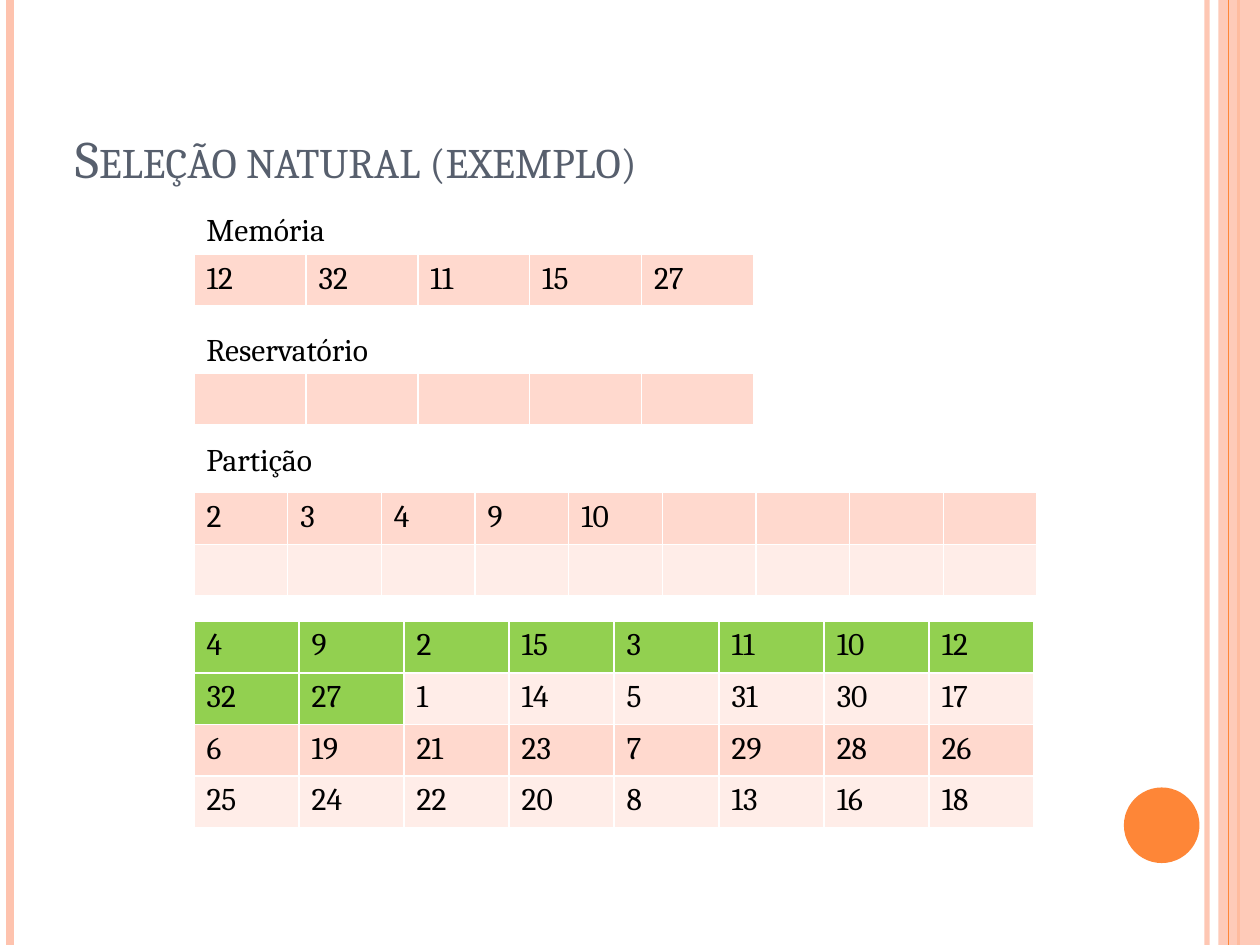
from lxml import etree
from pptx import Presentation
from pptx.dml.color import RGBColor
from pptx.enum.shapes import MSO_CONNECTOR, MSO_SHAPE
from pptx.enum.text import MSO_ANCHOR, MSO_AUTO_SIZE
from pptx.oxml.ns import qn
from pptx.util import Inches, Pt

STRAIGHT = MSO_CONNECTOR.STRAIGHT
RECTANGLE, OVAL = MSO_SHAPE.RECTANGLE, MSO_SHAPE.OVAL
BOTTOM = MSO_ANCHOR.BOTTOM
FIT_SHAPE = MSO_AUTO_SIZE.SHAPE_TO_FIT_TEXT

ORANGE = RGBColor(0xFE, 0x86, 0x37)
PEACH = RGBColor(0xFE, 0xC3, 0xAE)
SLATE = RGBColor(0x57, 0x5F, 0x6D)
BLACK = RGBColor(0, 0, 0)
GREEN = RGBColor(0x92, 0xD0, 0x50)
BANDS = [RGBColor(0xFF, 0xD9, 0xCE), RGBColor(0xFF, 0xED, 0xE8)]
FONT = "Cambria"
LEFT = 1.54
ROW_HEIGHT = 0.41

MEMORY = [[12, 32, 11, 15, 27]]
RESERVOIR = [[""] * 5]
PARTITION = [[2, 3, 4, 9, 10] + [""] * 4, [""] * 9]
INPUT = [
    [4, 9, 2, 15, 3, 11, 10, 12],
    [32, 27, 1, 14, 5, 31, 30, 17],
    [6, 19, 21, 23, 7, 29, 28, 26],
    [25, 24, 22, 20, 8, 13, 16, 18],
]
ALREADY_READ = 10


def set_alpha(part, percent):
    color = next(part._element.spPr.iter(qn("a:srgbClr")))
    etree.SubElement(color, qn("a:alpha")).set("val", str(percent * 1000))


def style_run(run, size, color):
    run.font.name = FONT
    run.font.size = Pt(size)
    run.font.color.rgb = color


def add_stripe(slide, x, height, color, width):
    stripe = slide.shapes.add_connector(
        STRAIGHT, Inches(x), 0, Inches(x), Inches(height))
    stripe.line.color.rgb = color
    stripe.line.width = Pt(width)
    etree.SubElement(stripe._element.spPr, qn("a:effectLst"))
    return stripe


def add_plain_shape(slide, kind, left, top, width, height, color):
    shape = slide.shapes.add_shape(
        kind, Inches(left), Inches(top), Inches(width), Inches(height))
    shape.shadow.inherit = False
    shape.fill.solid()
    shape.fill.fore_color.rgb = color
    shape.line.fill.background()
    return shape


def add_decoration(slide, width, height):
    # Stripes along both edges, and the disc
    set_alpha(add_stripe(slide, width - 0.42, height, PEACH, 3), 93)
    add_stripe(slide, 0.08, height, PEACH, 4.5)
    add_stripe(slide, width - 0.17, height, ORANGE, 1.5)
    band = add_plain_shape(slide, RECTANGLE, width - 0.33, 0, 0.33, height, PEACH)
    set_alpha(band, 87)
    add_stripe(slide, width - 0.25, height, ORANGE, 0.75)
    add_plain_shape(slide, OVAL, width - 1.08, height - 1.25, 0.6, 0.6, ORANGE)


def add_title(slide, left, top, width, height):
    title = slide.shapes.add_textbox(
        Inches(left), Inches(top), Inches(width), Inches(height))
    frame = title.text_frame
    frame.word_wrap = True
    frame.vertical_anchor = BOTTOM
    frame.text = "Seleção natural (exemplo)"
    run = frame.paragraphs[0].runs[0]
    style_run(run, 30, SLATE)
    run.font._element.set("cap", "small")


def add_label(slide, text, left, top, width):
    label = slide.shapes.add_textbox(
        Inches(left), Inches(top), Inches(width), Inches(0.4))
    frame = label.text_frame
    frame.word_wrap = False
    frame.auto_size = FIT_SHAPE
    frame.text = text
    style_run(frame.paragraphs[0].runs[0], 18, BLACK)


def add_white_borders(cell):
    properties = cell._tc.get_or_add_tcPr()
    for position, side in enumerate(("a:lnL", "a:lnR", "a:lnT", "a:lnB")):
        border = etree.Element(qn(side), w=str(Pt(1)))
        fill = etree.SubElement(border, qn("a:solidFill"))
        etree.SubElement(fill, qn("a:srgbClr")).set("val", "FFFFFF")
        properties.insert(position, border)


def add_number_grid(slide, rows, left, top, width, marked=0):
    """Banded grid whose first `marked` cells are green."""
    columns = len(rows[0])
    grid = slide.shapes.add_table(
        len(rows), columns, Inches(left), Inches(top),
        Inches(width), Inches(ROW_HEIGHT * len(rows))).table
    grid.first_row = False
    for column in grid.columns:
        column.width = Inches(width / columns)
    for r, numbers in enumerate(rows):
        grid.rows[r].height = Inches(ROW_HEIGHT)
        for c, number in enumerate(numbers):
            cell = grid.cell(r, c)
            cell.fill.solid()
            is_marked = r * columns + c < marked
            cell.fill.fore_color.rgb = GREEN if is_marked else BANDS[r % 2]
            add_white_borders(cell)
            cell.text_frame.text = str(number)
            for run in cell.text_frame.paragraphs[0].runs:
                style_run(run, 18, BLACK)


def main():
    presentation = Presentation()
    presentation.slide_width = Inches(10)
    presentation.slide_height = Inches(7.5)
    slide = presentation.slides.add_slide(presentation.slide_layouts[6])

    add_decoration(slide, 10, 7.5)
    add_title(slide, 0.5, 0.3, 8.17, 1.25)

    # Memory, reservoir and partition, then the input numbers
    add_label(slide, "Memória", LEFT, 1.62, 1.25)
    add_number_grid(slide, MEMORY, LEFT, 2.02, 4.44)
    add_label(slide, "Reservatório", LEFT, 2.57, 1.68)
    add_number_grid(slide, RESERVOIR, LEFT, 2.96, 4.44)
    add_label(slide, "Partição", LEFT, 3.44, 1.18)
    add_number_grid(slide, PARTITION, LEFT, 3.91, 6.69)
    add_number_grid(slide, INPUT, LEFT, 4.93, 6.67, ALREADY_READ)

    presentation.save("out.pptx")


if __name__ == "__main__":
    main()
